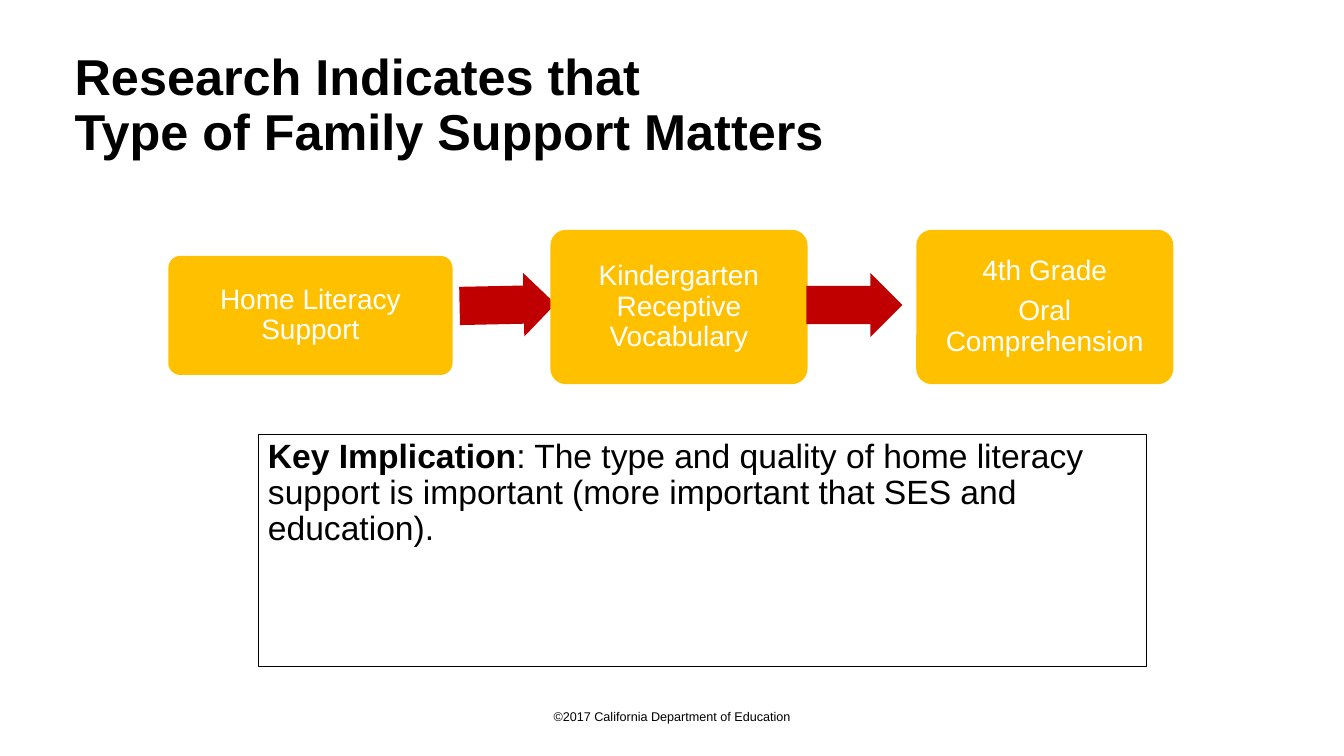
from dataclasses import dataclass
from typing import NamedTuple

from pptx import Presentation
from pptx import util as u
from pptx.dml.color import RGBColor
from pptx.enum import shapes, text


@dataclass(frozen=True)
class Theme:
    font: str = "Arial"
    ink: str = "000000"
    paper: str = "FFFFFF"
    step: str = "FFC000"
    arrow: str = "C00000"
    title_size: float = 36
    key_size: float = 24
    step_size: float = 20
    footer_size: float = 9


class Frame(NamedTuple):
    left: float
    top: float
    width: float
    height: float


class Span(NamedTuple):
    words: str
    bold: bool = False


@dataclass(frozen=True)
class Step:
    frame: Frame
    lines: tuple[str, ...]


@dataclass(frozen=True)
class Arrow:
    frame: Frame
    rotation: float = 0


THEME = Theme()
FLOW = (
    Step(Frame(120.24, 182.8, 203, 85), ("Home Literacy Support",)),
    Arrow(Frame(328.3, 195.1, 68.5, 45.5), 358.8),
    Step(Frame(393.2, 164.2, 183.6, 110.2), ("Kindergarten Receptive Vocabulary",)),
    Arrow(Frame(576, 195.1, 68.5, 45.5)),
    Step(Frame(654.5, 164.2, 183.6, 110.2), ("4th Grade", "Oral Comprehension")),
)


def place(box, frame: Frame) -> None:
    box.left, box.top, box.width, box.height = map(u.Pt, frame)


def write(box, paragraphs, *, size: float, color: str = THEME.ink,
          align=text.PP_ALIGN.LEFT, anchor=text.MSO_ANCHOR.MIDDLE,
          spacing: float = 0.9, gap: float = 0,
          inset: tuple[float, float] = (7.2, 3.6)) -> None:
    frame = box.text_frame
    frame.word_wrap = True
    frame.auto_size = text.MSO_AUTO_SIZE.NONE
    frame.vertical_anchor = anchor
    frame.margin_left = frame.margin_right = u.Pt(inset[0])
    frame.margin_top = frame.margin_bottom = u.Pt(inset[1])
    for index, spans in enumerate(paragraphs):
        para = frame.add_paragraph() if index else frame.paragraphs[0]
        para.alignment = align
        para.line_spacing = spacing
        para.space_before = u.Pt(gap if index else 0)
        for words, bold in spans:
            for number, line in enumerate(words.split("\n")):
                if number:
                    para.add_line_break()
                span = para.add_run()
                span.text = line
                span.font.name = THEME.font
                span.font.size = u.Pt(size)
                span.font.bold = bold
                span.font.color.rgb = RGBColor.from_string(color)


def add_block(page, kind, frame: Frame, fill: str, line: str | None = None):
    box = page.shapes.add_shape(kind, *map(u.Pt, frame))
    box.shadow.inherit = False
    box.fill.solid()
    box.fill.fore_color.rgb = RGBColor.from_string(fill)
    if line:
        box.line.color.rgb = RGBColor.from_string(line)
        box.line.width = u.Pt(0.75)
    else:
        box.line.fill.background()
    return box


def draw_step(page, step: Step) -> None:
    box = add_block(page, shapes.MSO_SHAPE.ROUNDED_RECTANGLE, step.frame, THEME.step)
    box.adjustments[0] = 0.1
    write(box, [[Span(line)] for line in step.lines], size=THEME.step_size,
          color=THEME.paper, align=text.PP_ALIGN.CENTER, gap=7, inset=(6, 6))


def draw_arrow(page, arrow: Arrow) -> None:
    box = add_block(page, shapes.MSO_SHAPE.RIGHT_ARROW, arrow.frame, THEME.arrow)
    box.adjustments[0], box.adjustments[1] = 0.6, 0.5
    box.rotation = arrow.rotation


def main() -> None:
    deck = Presentation()
    deck.slide_width, deck.slide_height = u.Pt(960), u.Pt(540)
    page = deck.slides.add_slide(deck.slide_layouts.get_by_name("Title Only"))

    footer = page.shapes.add_textbox(*map(u.Pt, Frame(0, 502.6, 960, 18)))
    write(footer, [[Span("©2017 California Department of Education")]],
          size=THEME.footer_size, align=text.PP_ALIGN.CENTER, spacing=1.0)

    title = page.shapes.title
    place(title, Frame(46.1, 0, 792, 152.6))
    write(title, [[Span("Research Indicates that\nType of Family Support Matters", True)]],
          size=THEME.title_size)

    for item in FLOW:
        if isinstance(item, Step):
            draw_step(page, item)
        else:
            draw_arrow(page, item)

    key = add_block(page, shapes.MSO_SHAPE.RECTANGLE, Frame(184.3, 310.3, 635, 165.6),
                    THEME.paper, THEME.ink)
    write(key, [[Span("Key Implication", True),
                 Span(": The type and quality of home literacy support is important "
                      "(more important that SES and education).")]],
          size=THEME.key_size, anchor=text.MSO_ANCHOR.TOP)

    deck.save("out.pptx")


if __name__ == "__main__":
    main()
